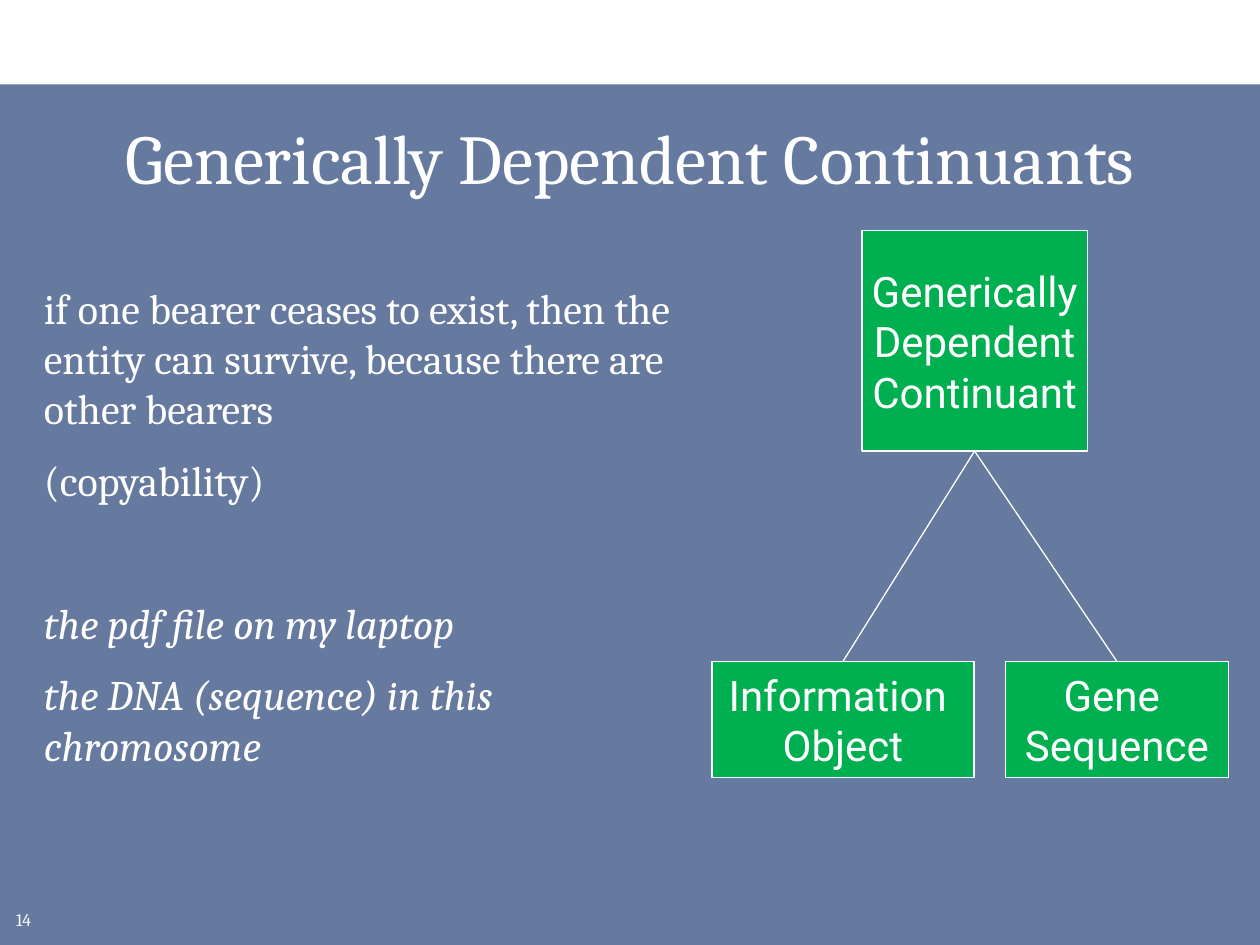
from lxml.etree import SubElement
from pptx import Presentation
from pptx.dml.color import RGBColor
from pptx.enum.shapes import MSO_CONNECTOR, MSO_SHAPE
from pptx.enum.text import MSO_ANCHOR, PP_ALIGN
from pptx.oxml.ns import qn
from pptx.util import Inches, Pt

COLORS = {"navy": "002060", "green": "00B050", "white": "FFFFFF"}
SERIF, SANS = "Cambria", "Roboto"
BOTTOM, TOP = 2, 0  # connection sites


def rgb(name):
    return RGBColor.from_string(COLORS[name])


def add_run(p, text, size, font, italic=False):
    r = p.add_run()
    r.text = text
    r.font.size = Pt(size)
    r.font.name = font
    r.font.color.rgb = rgb("white")
    if italic:
        r.font.italic = True


def add_rect(slide, x, y, w, h, color):
    sp = slide.shapes.add_shape(
        MSO_SHAPE.RECTANGLE, Inches(x), Inches(y), Inches(w), Inches(h))
    sp.shadow.inherit = False
    sp.fill.solid()
    sp.fill.fore_color.rgb = rgb(color)
    return sp


def add_background(slide):
    sp = add_rect(slide, 0, 0.67, 10, 6.83, "navy")
    sp.line.fill.background()
    color = sp.fill._xPr.find(qn("a:solidFill"))[0]
    SubElement(color, qn("a:alpha"), val="60000")


def add_text(slide, x, y, w, h, paragraphs, size,
             align=PP_ALIGN.LEFT, anchor=MSO_ANCHOR.TOP):
    """Each paragraph is (text, space before in points, italic)."""
    tf = slide.shapes.add_textbox(
        Inches(x), Inches(y), Inches(w), Inches(h)).text_frame
    tf.word_wrap = True
    tf.vertical_anchor = anchor
    for i, (text, space, italic) in enumerate(paragraphs):
        p = tf.add_paragraph() if i else tf.paragraphs[0]
        p.alignment = align
        if space:
            p.space_before = Pt(space)
        add_run(p, text, size, SERIF, italic)


def add_class_box(slide, x, y, w, h, lines):
    sp = add_rect(slide, x, y, w, h, "green")
    sp.line.color.rgb = rgb("white")
    sp.line.width = Pt(0.75)
    tf = sp.text_frame
    tf.word_wrap = False
    tf.vertical_anchor = MSO_ANCHOR.MIDDLE
    for i, line in enumerate(lines):
        p = tf.add_paragraph() if i else tf.paragraphs[0]
        p.alignment = PP_ALIGN.CENTER
        add_run(p, line, 24, SANS)
    return sp


def add_link(slide, parent, child):
    cx = slide.shapes.add_connector(MSO_CONNECTOR.STRAIGHT, 0, 0, 0, 0)
    cx.begin_connect(parent, BOTTOM)
    cx.end_connect(child, TOP)
    cx.line.color.rgb = rgb("white")
    cx.line.width = Pt(0.75)
    SubElement(cx._element.spPr, qn("a:effectLst"))


def main():
    prs = Presentation()
    prs.slide_width, prs.slide_height = Inches(10), Inches(7.5)
    slide = prs.slides.add_slide(prs.slide_layouts[6])

    # Background, page number and title
    add_background(slide)
    add_text(slide, 0.03, 7.17, 0.39, 0.25, [("14", 0, False)], 10,
             anchor=MSO_ANCHOR.MIDDLE)
    add_text(slide, 0.25, 0.83, 9.5, 0.83,
             [("Generically Dependent Continuants", 0, False)], 40,
             PP_ALIGN.CENTER, MSO_ANCHOR.MIDDLE)

    # Class hierarchy
    parent = add_class_box(slide, 6.84, 1.83, 1.79, 1.75,
                           ["Generically", "Dependent", "Continuant"])
    children = [
        add_class_box(slide, x, 5.25, w, 0.92, lines)
        for x, w, lines in [(5.65, 2.08, ["Information ", "Object"]),
                            (7.98, 1.77, ["Gene ", "Sequence"])]
    ]
    for child in children:
        add_link(slide, parent, child)

    # Explanation, then examples in italics after a wide gap
    add_text(slide, 0.25, 2.19, 5.42, 4.14, [
        ("if one bearer ceases to exist, then the entity can survive, "
         "because there are other bearers", 0, False),
        ("(copyability)", 12, False),
        ("the pdf file on my laptop", 53, True),
        ("the DNA (sequence) in this chromosome", 12, True),
    ], 24)

    prs.save("out.pptx")


if __name__ == "__main__":
    main()
